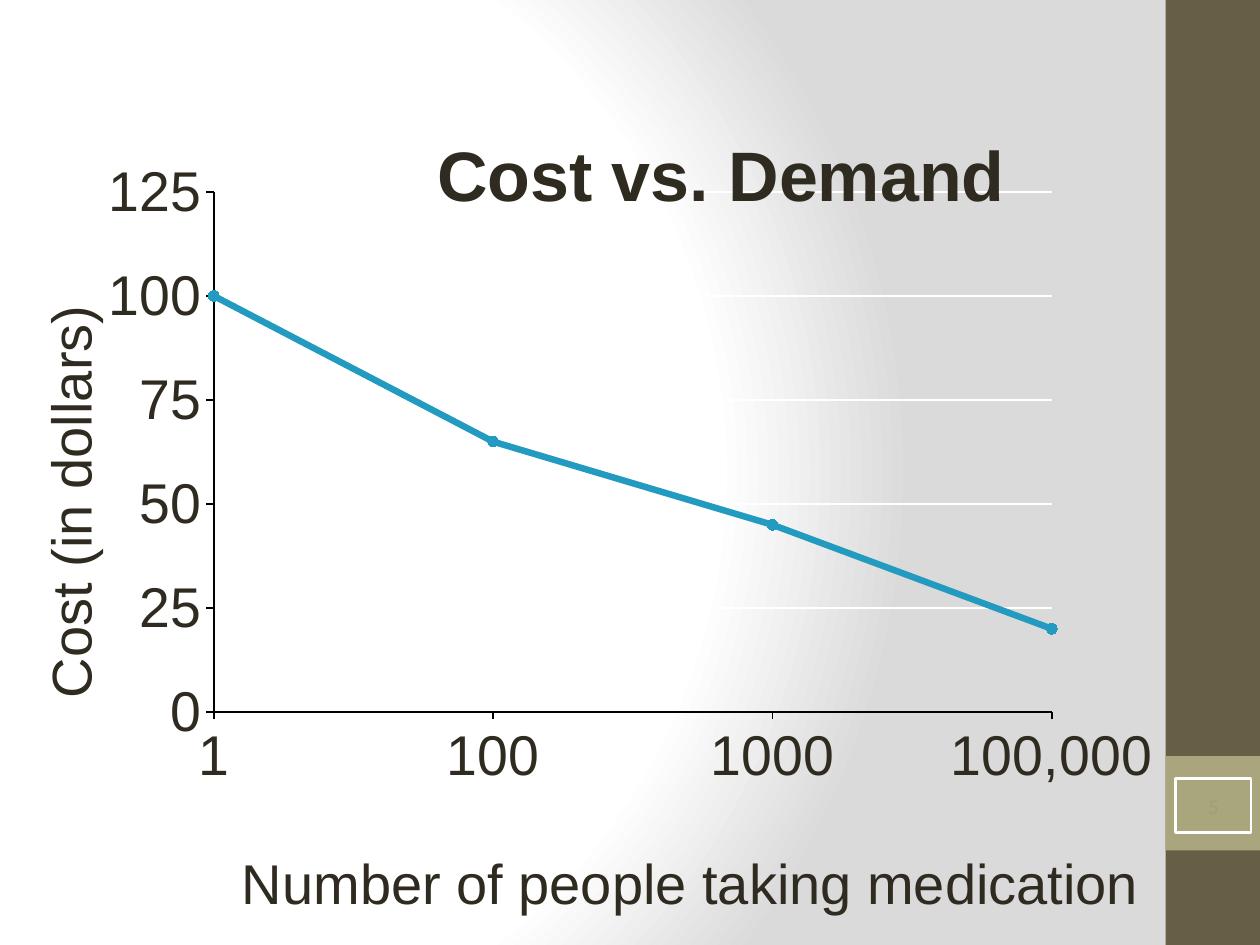
"""Build the Cost vs. Demand line chart slide."""
import pptx
import pptx.chart.data
import pptx.dml.color
import pptx.enum.chart
import pptx.enum.shapes
import pptx.enum.text
import pptx.oxml
import pptx.oxml.ns
import pptx.util
from pptx.util import Inches

RGBColor = pptx.dml.color.RGBColor
WHITE = RGBColor(0xFF, 0xFF, 0xFF)
BLACK = RGBColor(0, 0, 0)
INK = RGBColor(0x2F, 0x2B, 0x20)
BROWN = RGBColor(0x67, 0x5E, 0x47)
OLIVE = RGBColor(0xA9, 0xA5, 0x7C)
DIM_OLIVE = RGBColor(0xA1, 0x9D, 0x76)
BLUE = RGBColor(0x23, 0x9A, 0xC0)


def add_text(s, text, at, size=32, bold=False, color=INK, font="Arial",
             rotation=0, wrap=False, align=None):
    sp = s.shapes.add_textbox(*[Inches(v) for v in at])
    sp.rotation = rotation
    tf = sp.text_frame
    tf.word_wrap = wrap
    tf.margin_left = tf.margin_right = Inches(0.05)
    tf.margin_top = tf.margin_bottom = Inches(0.05)
    tf.vertical_anchor = pptx.enum.text.MSO_ANCHOR.MIDDLE
    p = tf.paragraphs[0]
    p.alignment = align
    r = p.add_run()
    r.text = text
    r.font.name = font
    r.font.size = pptx.util.Pt(size)
    r.font.bold = bold
    r.font.color.rgb = color


prs = pptx.Presentation()
prs.slide_width = Inches(10)
prs.slide_height = Inches(7.5)
s = prs.slides.add_slide(prs.slide_layouts[6])

stops = "".join(
    f'<a:gs pos="{pos * 1000}"><a:srgbClr val="{color}"/></a:gs>'
    for pos, color in [(0, "FFFFFF"), (75, "FFFFFF"), (100, "DADADA")]
)
bg = pptx.oxml.parse_xml(
    f'<p:bg {pptx.oxml.ns.nsdecls("p", "a")}><p:bgPr>'
    f'<a:gradFill rotWithShape="1"><a:gsLst>{stops}</a:gsLst>'
    '<a:path path="circle"><a:fillToRect l="20000" t="50000" r="100000" b="50000"/></a:path>'
    '</a:gradFill><a:effectLst/></p:bgPr></p:bg>'
)
s.element.cSld.insert(0, bg)

for at, fill, line in [
    ((9.25, 0, 0.75, 7.5), BROWN, None),
    ((9.25, 6, 0.75, 0.75), OLIVE, None),
    ((9.33, 6.18, 0.6, 0.43), None, WHITE),
]:
    sp = s.shapes.add_shape(pptx.enum.shapes.MSO_SHAPE.RECTANGLE, *[Inches(v) for v in at])
    sp.shadow.inherit = False
    if fill is None:
        sp.fill.background()
    else:
        sp.fill.solid()
        sp.fill.fore_color.rgb = fill
    if line is None:
        sp.line.fill.background()
    else:
        sp.line.color.rgb = line
        sp.line.width = pptx.util.Pt(1.5)

add_text(s, "5", (9.33, 6.18, 0.6, 0.43), size=12, color=DIM_OLIVE, font="Calibri",
         wrap=True, align=pptx.enum.text.PP_ALIGN.CENTER)
add_text(s, "Cost (in dollars)", (-1.32, 3.4, 3.74, 0.64), rotation=270, wrap=True)

data = pptx.chart.data.CategoryChartData()
data.categories = ["1", "100", "1000", "100,000"]
data.add_series("Region 1", [100, 65, 45, 20])
chart = s.shapes.add_chart(
    pptx.enum.chart.XL_CHART_TYPE.LINE_MARKERS,
    Inches(0.86), Inches(1.26), Inches(8.29), Inches(4.99), data,
).chart
chart.has_title = False
chart.has_legend = False
chart.font.name = "Calibri"
chart.font.size = pptx.util.Pt(10)
chart.font.color.rgb = INK

for axis in (chart.category_axis, chart.value_axis):
    axis.major_tick_mark = pptx.enum.chart.XL_TICK_MARK.OUTSIDE
    axis.minor_tick_mark = pptx.enum.chart.XL_TICK_MARK.NONE
    axis.tick_labels.font.name = "Arial"
    axis.tick_labels.font.size = pptx.util.Pt(32)
    axis.tick_labels.font.color.rgb = INK
    axis.format.line.color.rgb = BLACK
    axis.format.line.width = pptx.util.Pt(1)
chart.category_axis.tick_label_position = pptx.enum.chart.XL_TICK_LABEL_POSITION.LOW

values = chart.value_axis
values.minimum_scale = 0
values.maximum_scale = 125
values.major_unit = 25
values.has_major_gridlines = True
values.major_gridlines.format.line.color.rgb = WHITE
values.major_gridlines.format.line.width = pptx.util.Pt(1)

plot = chart.plots[0]
plot.vary_by_categories = False
series = plot.series[0]
series.smooth = False
series.format.line.color.rgb = BLUE
series.format.line.width = pptx.util.Pt(3.75)
series.marker.style = pptx.enum.chart.XL_MARKER_STYLE.CIRCLE
series.marker.size = 6
series.marker.format.fill.solid()
series.marker.format.fill.fore_color.rgb = BLUE
series.marker.format.line.color.rgb = BLUE

qn = pptx.oxml.ns.qn
nsdecls = pptx.oxml.ns.nsdecls
plot_area = chart.element.find(".//" + qn("c:plotArea"))
for old in plot_area.findall(qn("c:layout")):
    plot_area.remove(old)
sizes = "".join(
    f'<c:{tag} val="{val}"/>'
    for tag, val in [("layoutTarget", "inner"), ("xMode", "edge"), ("yMode", "edge"),
                     ("x", 0.095), ("y", 0.053), ("w", 0.811), ("h", 0.828)]
)
plot_area.insert(0, pptx.oxml.parse_xml(
    f'<c:layout {nsdecls("c")}><c:manualLayout>{sizes}</c:manualLayout></c:layout>'
))
plot_area.find(".//" + qn("c:majorUnit")).addprevious(
    pptx.oxml.parse_xml(f'<c:crossBetween {nsdecls("c")} val="midCat"/>')
)

add_text(s, "Number of people taking medication", (1.87, 6.68, 7.27, 0.64))
add_text(s, "Cost vs. Demand", (3.42, 0.99, 4.65, 0.77), size=40, bold=True)

prs.save("out.pptx")
